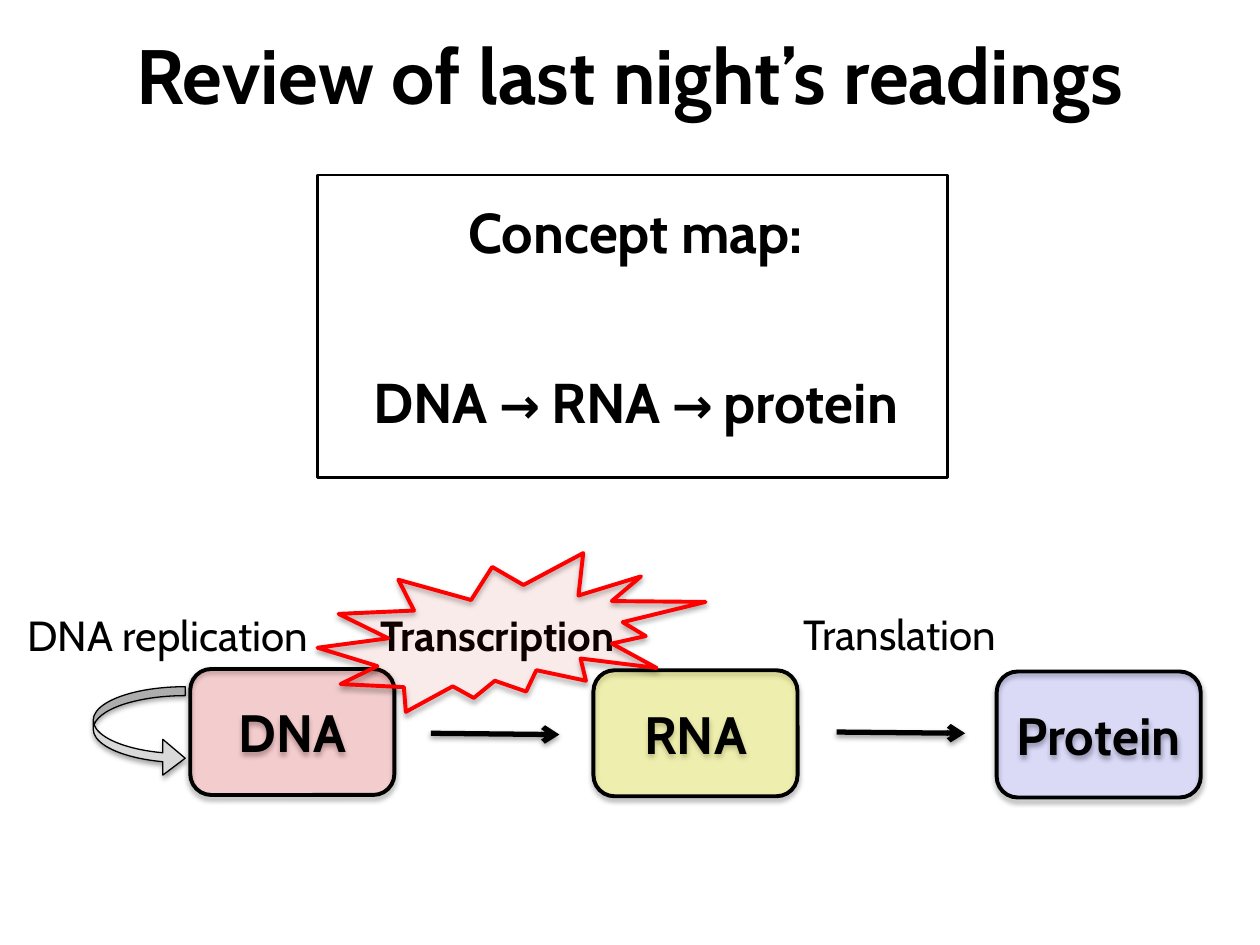
from lxml import etree
from pptx import Presentation
from pptx.dml.color import RGBColor
from pptx.enum import shapes, text
from pptx.oxml.ns import qn
from pptx.util import Inches, Pt

COLORS = {"ink": "000000", "dna": "FF0000", "rna": "FFFF00", "protein": "0000FF",
          "burst": "FF0000", "loop": "D9D9D9"}
FONT = "Cabin"
CENTER = text.PP_ALIGN.CENTER

prs = Presentation()
prs.slide_width, prs.slide_height = Inches(10), Inches(7.5)
COL, ROW = prs.slide_width / 100, prs.slide_height / 75


def grid(box, x, y, w=0, h=0):
    """Columns and rows, counted from the corner of a box, as slide lengths."""
    return (round((box[0] + x) * COL), round((box[1] + y) * ROW),
            round(w * COL), round(h * ROW))


def rgb(name):
    return RGBColor.from_string(COLORS[name])


def style_runs(p, size, bold):
    for r in p.runs:
        r.font.name, r.font.size, r.font.bold = FONT, Pt(size), bold
        r.font.color.rgb = rgb("ink")


def add_shadow(s, alpha, dist):
    effects = s._element.spPr.find(qn("a:effectLst"))
    if effects is None:
        effects = etree.SubElement(s._element.spPr, qn("a:effectLst"))
    shadow = etree.SubElement(effects, qn("a:outerShdw"), blurRad=str(Pt(3.1)),
                              dist=str(Pt(dist)), dir="5400000", rotWithShape="0")
    color = etree.SubElement(shadow, qn("a:srgbClr"), val=COLORS["ink"])
    etree.SubElement(color, qn("a:alpha"), val=str(alpha * 1000))


def add_shape(s, kind, at, line, width, fill=None, opacity=100, shadow=True):
    sp = s.shapes.add_shape(kind, *at)
    sp.shadow.inherit = False
    sp.line.color.rgb, sp.line.width = rgb(line), Pt(width)
    if fill:
        sp.fill.solid()
        sp.fill.fore_color.rgb = rgb(fill)
        if opacity < 100:
            color = sp._element.spPr.find(qn("a:solidFill"))[0]
            etree.SubElement(color, qn("a:alpha"), val=str(opacity * 1000))
    else:
        sp.fill.background()
    if shadow:
        add_shadow(sp, 35, 1.8)
    return sp


def add_text(s, at, words, size, bold=True, wrap=True):
    tf = s.shapes.add_textbox(*at).text_frame
    tf.word_wrap = wrap
    tf.text = words
    for p in tf.paragraphs:
        style_runs(p, size, bold)
        if wrap:
            p.alignment = CENTER
    return tf


def add_title(s, box):
    tf = add_text(s, grid(box, 0, 0, *box[2:]), "Review of last night’s readings", 44)
    tf.vertical_anchor = text.MSO_ANCHOR.MIDDLE
    tf.paragraphs[0].line_spacing = 0.8


def add_concept_map(s, box):
    tf = add_text(s, grid(box, 0, 0, *box[2:]), "Concept map:", 32)
    chain = tf.add_paragraph()
    for words in ("DNA", " → ", "RNA", " → ", "protein"):
        chain.add_run().text = words
    style_runs(chain, 32, True)
    for arrow in chain.runs[1::2]:
        arrow.font.size = Pt(28)
    chain.alignment = CENTER
    chain.space_before = Pt(51)
    for p in tf.paragraphs:
        p.line_spacing = 1.2


def add_node(s, at, words, fill, opacity):
    sp = add_shape(s, shapes.MSO_SHAPE.ROUNDED_RECTANGLE, at, "ink", 2.25, fill, opacity)
    tf = sp.text_frame
    tf.text = words
    tf.vertical_anchor = text.MSO_ANCHOR.MIDDLE
    tf.paragraphs[0].alignment = CENTER
    style_runs(tf.paragraphs[0], 30, True)


def add_step(s, box, x, y, length):
    x1, y1, dx, dy = grid(box, x, y, length, 0.1)
    line = s.shapes.add_connector(shapes.MSO_CONNECTOR.STRAIGHT, x1, y1, x1 + dx, y1 + dy)
    line.line.color.rgb, line.line.width = rgb("ink"), Pt(3)
    etree.SubElement(line.line._get_or_add_ln(), qn("a:tailEnd"), type="arrow")
    add_shadow(line, 38, 1.6)


def add_pathway(s, box):
    # Molecules, one every 32 columns
    nodes = [("DNA", "dna", 15), ("RNA", "rna", 25), ("Protein", "protein", 11)]
    for i, node in enumerate(nodes):
        add_node(s, grid(box, 13.9 + 32 * i, 9.2 + 0.1 * i, 16.2, 10), *node)
    # Steps between them
    for i in range(2):
        add_step(s, box, 33 + 32.2 * i, 14.3 - 0.1 * i, 10.2)
    # Step names
    for words, x, y, w, bold in [("Transcription", 28, 4, 21.6, True),
                                 ("Translation", 61.6, 3.9, 17.7, False),
                                 ("DNA replication", 0, 4, 24.4, False)]:
        add_text(s, grid(box, x, y, w, 5.1), words, 24, bold, wrap=False)
    # Replication loop
    loop = add_shape(s, shapes.MSO_SHAPE.CURVED_RIGHT_ARROW,
                     grid(box, 6.2, 10.6, 7.3, 7.1), "ink", 0.75, "loop")
    for i, value in enumerate((0.1, 0.4, 0.25)):
        loop.adjustments[i] = value
    # Highlight over transcription
    add_shape(s, shapes.MSO_SHAPE.EXPLOSION2, grid(box, 24, 0, 30.8, 12.6),
              "burst", 2.25, "burst", 6)


def add_frame(s, box):
    add_shape(s, shapes.MSO_SHAPE.RECTANGLE, grid(box, 0, 0, *box[2:]), "ink", 1.5,
              shadow=False)


def main():
    s = prs.slides.add_slide(prs.slide_layouts[6])
    add_title(s, (7.5, 0.9, 85, 11.2))
    add_concept_map(s, (4.8, 14.1, 91.3, 28.5))
    add_pathway(s, (1.2, 43.9, 94.1, 19.4))
    add_frame(s, (25.2, 13.9, 50, 24))
    prs.save("out.pptx")


if __name__ == "__main__":
    main()
